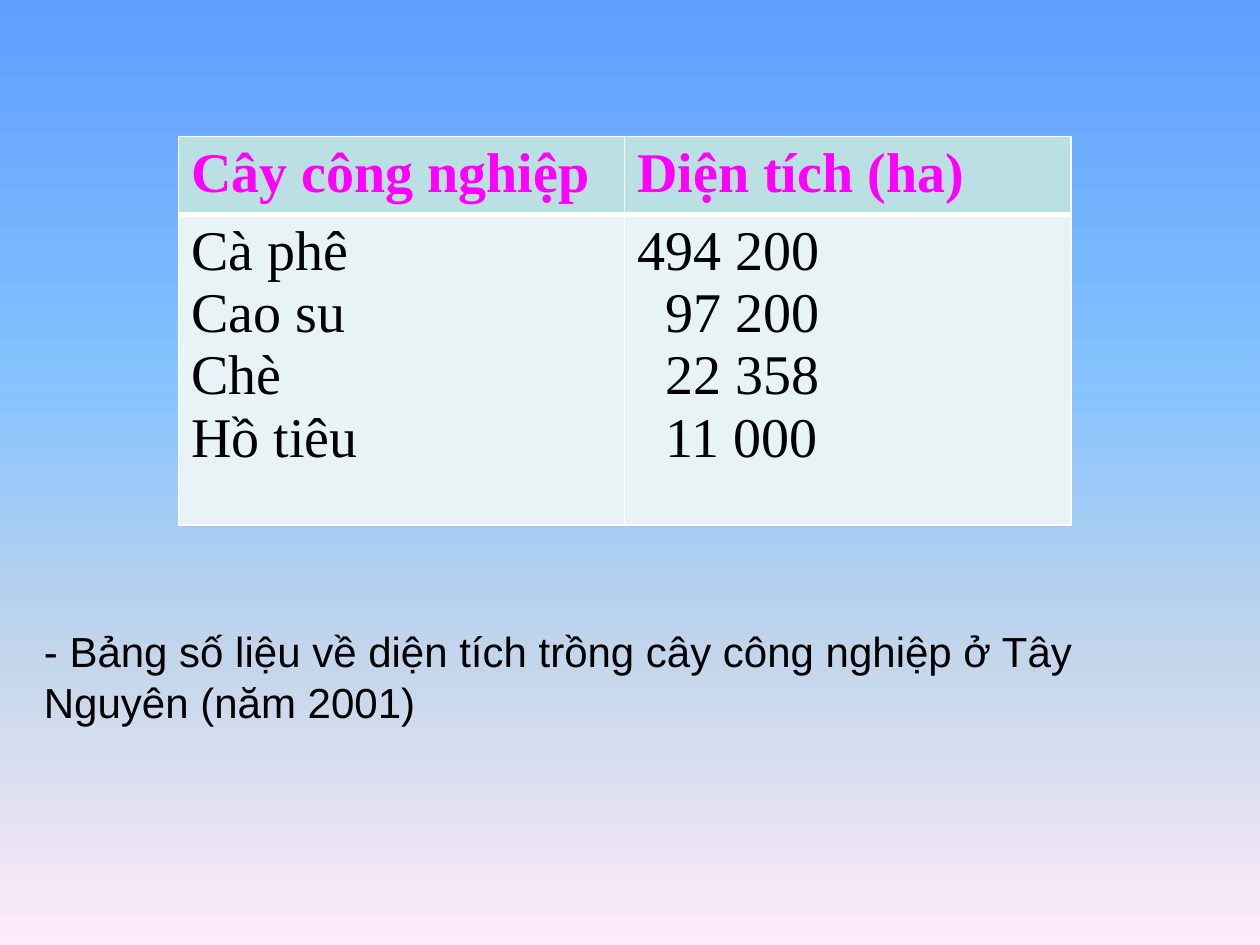
from copy import deepcopy
from dataclasses import dataclass

from lxml import etree
from pptx import Presentation
from pptx.dml.color import RGBColor
from pptx.oxml import ns
from pptx.util import Pt


@dataclass(frozen=True)
class Theme:
    serif: str = "Times New Roman"
    sans: str = "Arial"
    big: int = 32
    small: int = 24
    ink: str = "000000"
    pink: str = "FF00FF"
    head: str = "BBE0E3"
    body: str = "E7F3F4"
    rule: str = "FFFFFF"
    thin: int = 1
    thick: int = 3
    sky: tuple = ((0, "5E9EFF"), (0.4, "85C2FF"), (0.7, "C4D6EB"), (1, "FFEBFA"))


class Deck:
    def __init__(self, theme, width, height):
        self.theme = theme
        self.show = Presentation()
        self.show.slide_width, self.show.slide_height = Pt(width), Pt(height)
        self.slide = self.show.slides.add_slide(self.show.slide_layouts[6])

    def backdrop(self):
        fill = self.slide.background.fill
        fill.gradient()
        fill.gradient_angle = 270
        stops = next(self.slide.element.iter(ns.qn("a:gsLst")))
        while len(stops) < len(self.theme.sky):
            stops.append(deepcopy(stops[0]))
        for stop, (place, color) in zip(fill.gradient_stops, self.theme.sky):
            stop.position = place
            stop.color.rgb = RGBColor.from_string(color)

    def style(self, frame, font, size, color, bold=False):
        for para in frame.paragraphs:
            for run in para.runs:
                run.font.name, run.font.size = font, Pt(size)
                run.font.bold = bold
                run.font.color.rgb = RGBColor.from_string(color)

    def border(self, cell, top, bottom):
        thin = self.theme.thin
        props = cell._tc.get_or_add_tcPr()
        for side, width in zip("LRTB", (thin, thin, top, bottom)):
            line = etree.SubElement(props, ns.qn(f"a:ln{side}"), w=str(Pt(width)))
            fill = etree.SubElement(line, ns.qn("a:solidFill"))
            etree.SubElement(fill, ns.qn("a:srgbClr"), val=self.theme.rule)

    def table(self, rows, left, top, width, heights):
        t = self.theme
        grid = self.slide.shapes.add_table(
            len(rows), len(rows[0]), Pt(left), Pt(top), Pt(width), Pt(sum(heights))
        ).table
        for i, (row, height) in enumerate(zip(rows, heights)):
            grid.rows[i].height = Pt(height)
            head = i == 0
            for j, words in enumerate(row):
                cell = grid.cell(i, j)
                cell.text_frame.text = words
                color = t.pink if head else t.ink
                self.style(cell.text_frame, t.serif, t.big, color, head)
                edges = (t.thin, t.thick) if head else (t.thick, t.thin)
                self.border(cell, *edges)
                cell.fill.solid()
                cell.fill.fore_color.rgb = RGBColor.from_string(t.head if head else t.body)
        return grid

    def indent(self, paras, size):
        for para in paras:
            para._p.get_or_add_pPr().set("marL", str(Pt(size)))

    def note(self, words, left, top, width, height):
        box = self.slide.shapes.add_textbox(Pt(left), Pt(top), Pt(width), Pt(height))
        frame = box.text_frame
        frame.word_wrap = True
        frame.text = words
        self.style(frame, self.theme.sans, self.theme.small, self.theme.ink)


def main():
    theme = Theme()
    deck = Deck(theme, 720, 540)
    deck.backdrop()
    crops = (
        ("Cà phê", "494 200"),
        ("Cao su", "97 200"),
        ("Chè", "22 358"),
        ("Hồ tiêu", "11 000"),
    )
    names, areas = ("\n".join(part) for part in zip(*crops))
    rows = (("Cây công nghiệp", "Diện tích (ha)"), (names, areas))
    grid = deck.table(rows, 102, 78, 510, (44.4, 177.6))
    deck.indent(grid.cell(1, 1).text_frame.paragraphs[1:], theme.big / 2)
    deck.note(
        "- Bảng số liệu về diện tích trồng cây công nghiệp ở Tây Nguyên (năm 2001)",
        18, 354, 660, 65.5,
    )
    deck.show.save("out.pptx")


if __name__ == "__main__":
    main()
